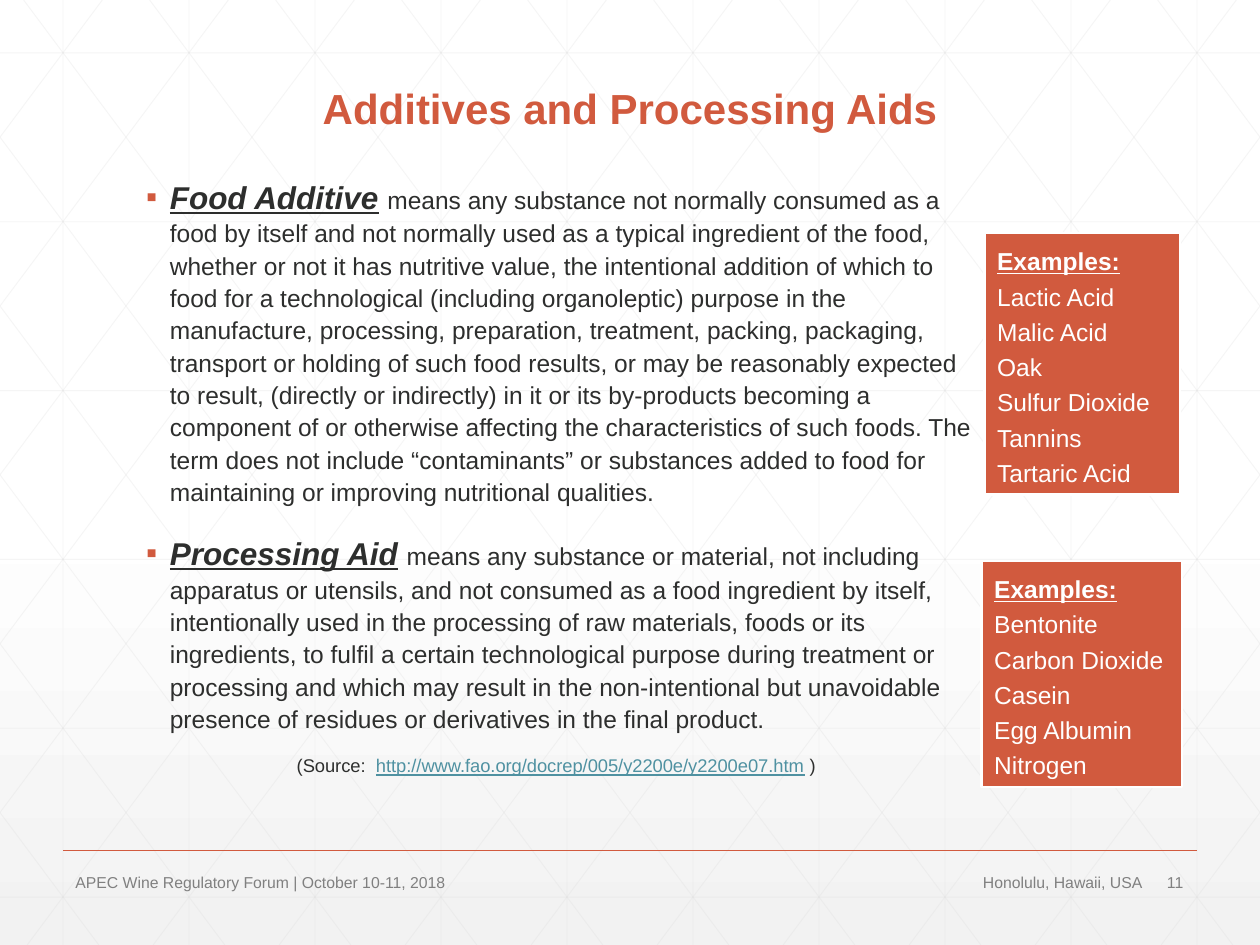
from copy import deepcopy
from dataclasses import dataclass

from lxml import etree
from pptx import Presentation
from pptx.dml.color import RGBColor
from pptx.enum import shapes, text
from pptx.oxml import ns
from pptx.util import Pt

W, H = 720, 540
FONT = "Arial"
COLORS = {"accent": "D15A3E", "ink": "2D2E2D", "grey": "808080", "grid": "D9D9D9",
          "link": "4F91A1", "white": "FFFFFF", "shade": "F2F2F2"}


@dataclass
class Run:
    text: str
    size: float
    color: str = "ink"
    bold: bool = False
    italic: bool = False
    underline: bool = False


@dataclass
class Para:
    runs: list[Run]
    spacing: float = 1.0
    before: float = 0
    align: text.PP_ALIGN = text.PP_ALIGN.LEFT
    indent: float = 0
    bullet: bool = False


@dataclass
class Box:
    left: float
    top: float
    width: float
    height: float


@dataclass
class Examples:
    box: Box
    items: list[str]


def rgb(name: str) -> RGBColor:
    return RGBColor.from_string(COLORS[name])


def sub(parent, tag: str, **attrs: str):
    return etree.SubElement(parent, ns.qn(tag), attrs)


def add_line(s, x1: float, y1: float, x2: float, y2: float, color: str,
             width: float, alpha: int = 100) -> None:
    ln = s.shapes.add_connector(shapes.MSO_CONNECTOR.STRAIGHT,
                                Pt(x1), Pt(y1), Pt(x2), Pt(y2))
    ln.line.color.rgb = rgb(color)
    ln.line.width = Pt(width)
    if alpha < 100:
        clr = next(ln._element.spPr.iter(ns.qn("a:srgbClr")))
        sub(clr, "a:alpha", val=str(alpha * 1000))
    sub(ln._element.spPr, "a:effectLst")


def add_bullet(p, hang: float) -> None:
    pPr = p._p.get_or_add_pPr()
    pPr.set("indent", str(-Pt(hang)))
    sub(sub(pPr, "a:buClr"), "a:srgbClr", val=COLORS["accent"])
    sub(pPr, "a:buFont", typeface=FONT)
    sub(pPr, "a:buChar", char="▪")


def fill_text(tf, paras: list[Para], anchor=text.MSO_ANCHOR.TOP) -> None:
    tf.word_wrap = True
    tf.vertical_anchor = anchor
    for i, para in enumerate(paras):
        p = tf.paragraphs[0] if i == 0 else tf.add_paragraph()
        p.alignment = para.align
        p.line_spacing = para.spacing
        p.space_before = Pt(para.before)
        p._p.get_or_add_pPr().set("marL", str(Pt(para.indent)))
        if para.bullet:
            add_bullet(p, para.indent)
        for run in para.runs:
            r = p.add_run()
            r.text = run.text
            f = r.font
            f.name, f.size, f.color.rgb = FONT, Pt(run.size), rgb(run.color)
            f.bold, f.italic, f.underline = run.bold, run.italic, run.underline


def add_text(s, b: Box, paras: list[Para], anchor=text.MSO_ANCHOR.TOP) -> None:
    sp = s.shapes.add_textbox(Pt(b.left), Pt(b.top), Pt(b.width), Pt(b.height))
    fill_text(sp.text_frame, paras, anchor)


def add_examples(s, ex: Examples) -> None:
    b = ex.box
    sp = s.shapes.add_shape(shapes.MSO_SHAPE.RECTANGLE,
                            Pt(b.left), Pt(b.top), Pt(b.width), Pt(b.height))
    sp.shadow.inherit = False
    sp.fill.solid()
    sp.fill.fore_color.rgb = rgb("accent")
    sp.line.color.rgb = rgb("white")
    sp.line.width = Pt(1.5)
    heading = Run("Examples:", 14, "white", bold=True, underline=True)
    runs = [heading] + [Run(item, 14, "white") for item in ex.items]
    fill_text(sp.text_frame, [Para([r], spacing=1.2) for r in runs],
              text.MSO_ANCHOR.MIDDLE)


def definition(term: str, meaning: str) -> Para:
    return Para([Run(term, 18, bold=True, italic=True, underline=True),
                 Run(" ", 18), Run(meaning, 14)],
                spacing=1.1, before=13.5, indent=13.5, bullet=True)


def add_background(s) -> None:
    fill = s.background.fill
    fill.gradient()
    fill.gradient_angle = 270
    first, last = fill.gradient_stops
    first.position, first.color.rgb = 0, rgb("white")
    last.position, last.color.rgb = 1, rgb("shade")
    gs = next(s._element.iter(ns.qn("a:gs")))
    middle = deepcopy(gs)
    middle.set("pos", "53000")
    gs.addnext(middle)


def add_grid(s) -> None:
    style = ("grid", 0.5, 25)
    for i in range(10):
        add_line(s, 36 + 72 * i, 0, 36 + 72 * i, H, *style)
    for i in range(6):
        y = 30.24 + 96.48 * i
        add_line(s, 0, y, W, y, *style)
    # Diagonals one inch apart, clipped to the slide, each with its mirror
    slope = 1.34
    for k in range(-5, 10):
        x0 = 13.5 + 72 * k
        x1, x2 = max(x0, 0), min(x0 + H / slope, W)
        y1, y2 = (x1 - x0) * slope, (x2 - x0) * slope
        add_line(s, x1, y1, x2, y2, *style)
        add_line(s, W - x1, y1, W - x2, y2, *style)


FOOD_ADDITIVE = (
    "means any substance not normally consumed as a food by itself and not normally used "
    "as a typical ingredient of the food, whether or not it has nutritive value, the "
    "intentional addition of which to food for a technological (including organoleptic) "
    "purpose in the manufacture, processing, preparation, treatment, packing, packaging, "
    "transport or holding of such food results, or may be reasonably expected to result, "
    "(directly or indirectly) in it or its by-products becoming a component of or otherwise "
    "affecting the characteristics of such foods. The term does not include “contaminants” "
    "or substances added to food for maintaining or improving nutritional qualities.")
PROCESSING_AID = (
    "means any substance or material, not including apparatus or utensils, and not consumed "
    "as a food ingredient by itself, intentionally used in the processing of raw materials, "
    "foods or its ingredients, to fulfil a certain technological purpose during treatment or "
    "processing and which may result in the non-intentional but unavoidable presence of "
    "residues or derivatives in the final product.")
EXAMPLES = [
    Examples(Box(562.7, 133.2, 111.6, 149.4),
             ["Lactic Acid", "Malic Acid", "Oak", "Sulfur Dioxide", "Tannins",
              "Tartaric Acid"]),
    Examples(Box(561, 320.5, 114.5, 129.3),
             ["Bentonite", "Carbon Dioxide", "Casein", "Egg Albumin", "Nitrogen"]),
]


def main() -> None:
    prs = Presentation()
    prs.slide_width, prs.slide_height = Pt(W), Pt(H)
    s = prs.slides.add_slide(prs.slide_layouts[6])
    add_background(s)
    add_grid(s)

    # Title
    add_text(s, Box(76.3, 39.6, 567.4, 40.3),
             [Para([Run("Additives and Processing Aids", 24, "accent", bold=True)],
                   spacing=0.9, align=text.PP_ALIGN.CENTER)], text.MSO_ANCHOR.BOTTOM)

    # Footer
    add_line(s, 36, 486, 684, 486, "accent", 1)
    for left, width, label, align in [
            (36, 362, "APEC Wine Regulatory Forum | October 10-11, 2018", text.PP_ALIGN.LEFT),
            (402, 257.8, "Honolulu, Hawaii, USA", text.PP_ALIGN.RIGHT),
            (659.8, 24.2, "11", text.PP_ALIGN.LEFT)]:
        add_text(s, Box(left, 495, width, 17.3),
                 [Para([Run(label, 9, "grey")], align=align)])

    # Definitions and their source
    source = [Run("(Source:  ", 10.5),
              Run("http://www.fao.org/docrep/005/y2200e/y2200e07.htm", 10.5, "link",
                  underline=True),
              Run(" )", 10.5)]
    add_text(s, Box(76.5, 95.8, 489.6, 362),
             [definition("Food Additive", FOOD_ADDITIVE),
              definition("Processing Aid", PROCESSING_AID),
              Para(source, spacing=0.9, before=13.5, indent=86)])

    # Example panels
    for ex in EXAMPLES:
        add_examples(s, ex)
    prs.save("out.pptx")


if __name__ == "__main__":
    main()
